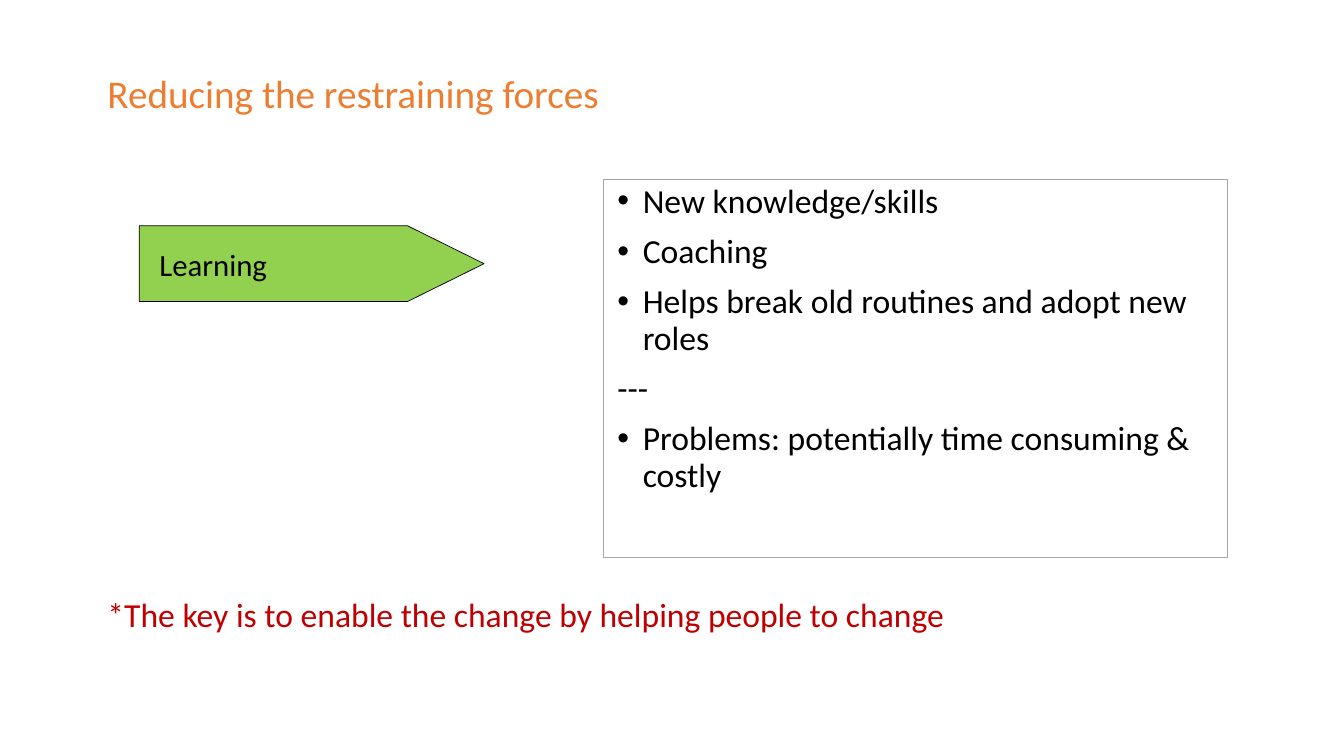
from lxml.etree import SubElement
from pptx import Presentation
from pptx.dml.color import RGBColor
from pptx.enum.shapes import MSO_SHAPE as Shape
from pptx.enum.text import MSO_ANCHOR as Anchor, PP_ALIGN as Align
from pptx.oxml.ns import qn
from pptx.util import Cm, Pt

COLORS = {
    "title": "ED7D31",
    "text": "000000",
    "arrow": "92D050",
    "frame": "A6A6A6",
    "key": "C00000",
}
POINTS = [
    ("New knowledge/skills", True),
    ("Coaching", True),
    ("Helps break old routines and adopt new roles", True),
    ("---", False),
    ("Problems: potentially time consuming & costly", True),
]


def color(name):
    """Return the named colour."""
    return RGBColor.from_string(COLORS[name])


def add_span(para, text, size, name):
    """Add one left-aligned run to a paragraph."""
    para.alignment = Align.LEFT
    span = para.add_run()
    span.text = text
    span.font.name = "Calibri"
    span.font.size = Pt(size)
    span.font.color.rgb = color(name)


def set_indent(para, bulleted):
    """Set the hanging indent and the bullet of a paragraph."""
    props = para._p.get_or_add_pPr()
    props.set("marL", str(Cm(0.74 if bulleted else 0.1)))
    props.set("indent", str(Cm(-0.64 if bulleted else 0)))
    if bulleted:
        SubElement(props, qn("a:buFont"), typeface="Arial")
        SubElement(props, qn("a:buChar"), char="•")
    else:
        SubElement(props, qn("a:buNone"))


def add_line(page, box, text, size, name, anchor=Anchor.TOP, spacing=1.0):
    """Place a single line of text in its box."""
    frame = page.shapes.add_textbox(*map(Cm, box)).text_frame
    frame.word_wrap = True
    frame.vertical_anchor = anchor
    para = frame.paragraphs[0]
    para.line_spacing = spacing
    add_span(para, text, size, name)


def add_points(page, box):
    """Place the framed list of points."""
    panel = page.shapes.add_shape(Shape.RECTANGLE, *map(Cm, box))
    panel.shadow.inherit = False
    panel.fill.background()
    panel.line.color.rgb = color("frame")
    panel.line.width = Pt(0.75)
    frame = panel.text_frame
    frame.word_wrap = True
    frame.vertical_anchor = Anchor.TOP
    for index, (text, bulleted) in enumerate(POINTS):
        para = frame.add_paragraph() if index else frame.paragraphs[0]
        para.line_spacing = 0.9
        para.space_before = Pt(10)
        set_indent(para, bulleted)
        add_span(para, text, 24, "text")


def add_arrow(page, box, text):
    """Place the labelled arrow."""
    arrow = page.shapes.add_shape(Shape.PENTAGON, *map(Cm, box))
    arrow.adjustments[0] = 1.01
    arrow.shadow.inherit = False
    arrow.fill.solid()
    arrow.fill.fore_color.rgb = color("arrow")
    arrow.line.color.rgb = color("text")
    arrow.line.width = Pt(0.5)
    frame = arrow.text_frame
    frame.word_wrap = True
    frame.margin_left = Cm(0.51)
    frame.vertical_anchor = Anchor.MIDDLE
    add_span(frame.paragraphs[0], text, 22, "text")


def main():
    """Build and save the deck."""
    deck = Presentation()
    deck.slide_width, deck.slide_height = Cm(33.87), Cm(19.05)
    page = deck.slides.add_slide(deck.slide_layouts[6])
    add_line(page, (2.46, 1.12, 21.46, 2.59), "Reducing the restraining forces",
             28, "title", Anchor.MIDDLE, 0.9)
    add_points(page, (15.21, 4.52, 15.72, 9.53))
    add_arrow(page, (3.51, 5.69, 8.69, 1.91), "Learning")
    add_line(page, (2.46, 14.83, 30.18, 1.27),
             "*The key is to enable the change by helping people to change",
             24, "key")
    deck.save("out.pptx")


if __name__ == "__main__":
    main()
